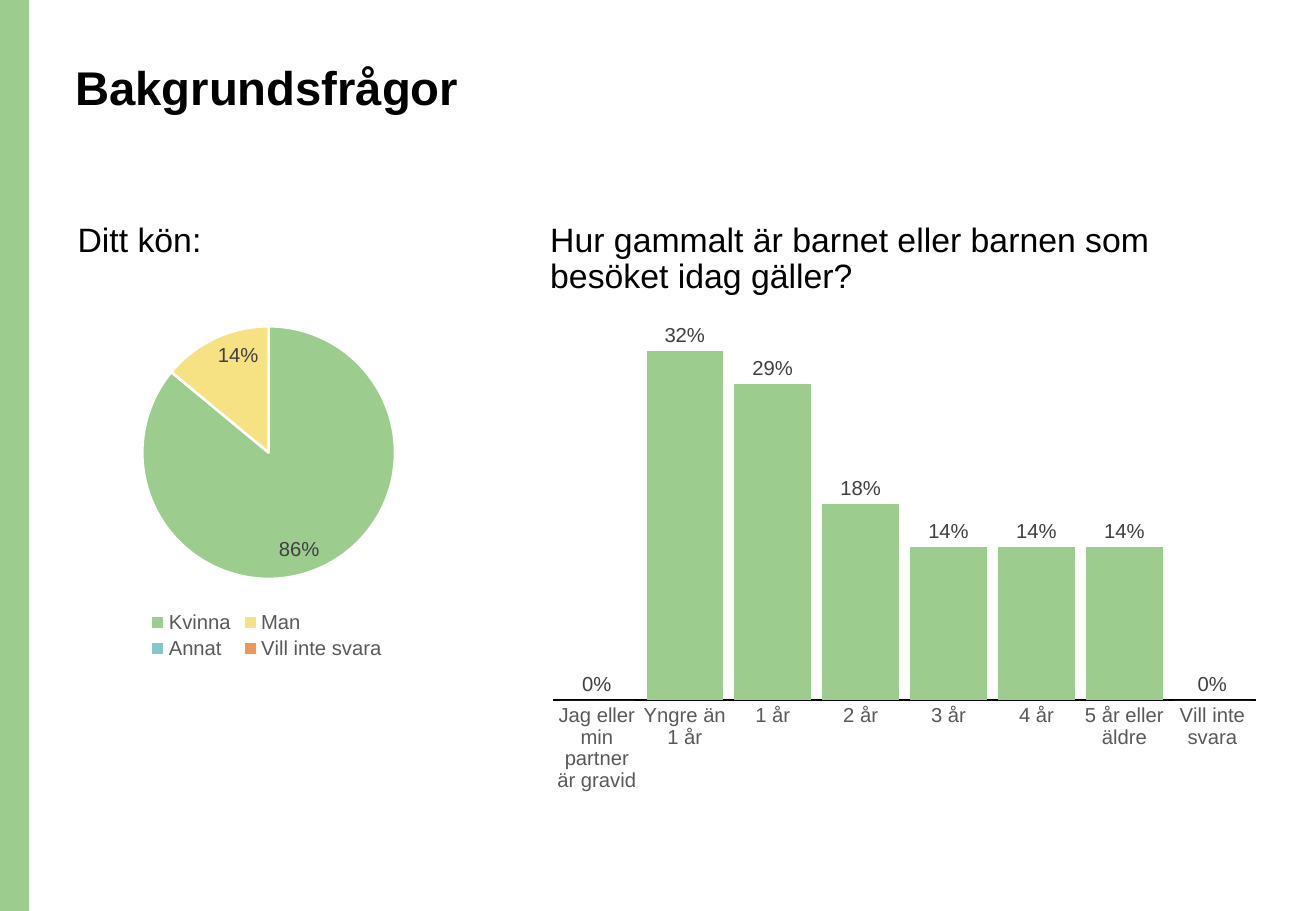
import pptx
import pptx.chart.data
import pptx.dml.color
import pptx.enum.chart
import pptx.enum.shapes
import pptx.enum.text
import pptx.oxml
import pptx.oxml.ns
import pptx.util
from pptx.util import Inches

COLOURS = {
    "text": "000000",
    "label": "404040",
    "muted": "595959",
    "white": "FFFFFF",
    "green": "9DCC8F",
    "yellow": "F6E183",
    "blue": "85C5CB",
    "orange": "F29559",
}
GENDERS = {"Kvinna": 0.86, "Man": 0.14, "Annat": 0, "Vill inte svara": 0}
CHILD_AGES = {
    "Jag eller min partner är gravid": 0,
    "Yngre än 1 år": 0.32,
    "1 år": 0.29,
    "2 år": 0.18,
    "3 år": 0.14,
    "4 år": 0.14,
    "5 år eller äldre": 0.14,
    "Vill inte svara": 0,
}


class SurveySlide:
    def __init__(self, presentation):
        self.slide = presentation.slides.add_slide(presentation.slide_layouts[5])

    def colour(self, name):
        return pptx.dml.color.RGBColor.from_string(COLOURS[name])

    def paint(self, fill, name):
        fill.solid()
        fill.fore_color.rgb = self.colour(name)

    def style_font(self, font, size, colour="text", bold=False):
        font.name = "Arial"
        font.size = pptx.util.Pt(size)
        font.bold = bold
        font.color.rgb = self.colour(colour)

    def set_text(self, shape, text, size, bold=False):
        frame = shape.text_frame
        frame.text = text
        frame.word_wrap = True
        frame.auto_size = pptx.enum.text.MSO_AUTO_SIZE.NONE
        frame.vertical_anchor = pptx.enum.text.MSO_ANCHOR.TOP
        paragraph = frame.paragraphs[0]
        paragraph.alignment = pptx.enum.text.PP_ALIGN.LEFT
        paragraph.line_spacing = 0.9
        self.style_font(paragraph.font, size, bold=bold)

    def add_band(self, left, top, width, height):
        band = self.slide.shapes.add_shape(
            pptx.enum.shapes.MSO_SHAPE.RECTANGLE,
            Inches(left), Inches(top), Inches(width), Inches(height))
        band.shadow.inherit = False
        self.paint(band.fill, "green")
        band.line.fill.background()

    def set_title(self, text, left, top, width, height):
        title = self.slide.shapes.title
        title.left, title.top = Inches(left), Inches(top)
        title.width, title.height = Inches(width), Inches(height)
        self.set_text(title, text, 28, bold=True)

    def add_question(self, text, left, top, width, height):
        box = self.slide.shapes.add_textbox(
            Inches(left), Inches(top), Inches(width), Inches(height))
        self.set_text(box, text, 20)

    def add_chart(self, kind, answers, box, plot_box, number_format, label_position):
        """Add a one-series chart; plot_box holds fractions of the chart's size."""
        data = pptx.chart.data.CategoryChartData()
        data.categories = list(answers)
        data.add_series("Series 1", list(answers.values()))
        chart = self.slide.shapes.add_chart(
            kind, *[Inches(length) for length in box], data).chart
        chart.has_title = False
        chart.has_legend = False
        self.style_font(chart.font, 10)
        self.place_plot(chart, plot_box)

        plot = chart.plots[0]
        plot.has_data_labels = True
        labels = plot.data_labels
        labels.show_value = True
        labels.show_percentage = False
        labels.number_format = number_format
        labels.number_format_is_linked = False
        labels.position = label_position
        self.style_font(labels.font, 12, "label")
        return chart

    def place_plot(self, chart, plot_box):
        plot_area = chart.element.chart.plotArea
        for layout in plot_area.findall(pptx.oxml.ns.qn("c:layout")):
            plot_area.remove(layout)
        sizes = "".join(
            f'<c:{tag} val="{value}"/>' for tag, value in zip("xywh", plot_box))
        plot_area.insert(0, pptx.oxml.parse_xml(
            f'<c:layout {pptx.oxml.ns.nsdecls("c")}><c:manualLayout>'
            '<c:layoutTarget val="inner"/><c:xMode val="edge"/><c:yMode val="edge"/>'
            f'{sizes}</c:manualLayout></c:layout>'))

    def add_pie(self, answers, box, plot_box, colours):
        chart = self.add_chart(
            pptx.enum.chart.XL_CHART_TYPE.PIE, answers, box, plot_box,
            '[<0.01]"";[>0.01]0%', pptx.enum.chart.XL_LABEL_POSITION.INSIDE_END)
        chart.plots[0].vary_by_categories = True
        for index, name in enumerate(colours):
            slice_format = chart.series[0].points[index].format
            self.paint(slice_format.fill, name)
            self.paint(slice_format.line.fill, "white")
            slice_format.line.width = pptx.util.Pt(1.5)
        chart.has_legend = True
        chart.legend.position = pptx.enum.chart.XL_LEGEND_POSITION.BOTTOM
        chart.legend.include_in_layout = False
        self.style_font(chart.legend.font, 12, "muted")

    def add_columns(self, answers, box, plot_box, maximum):
        chart = self.add_chart(
            pptx.enum.chart.XL_CHART_TYPE.COLUMN_CLUSTERED, answers, box, plot_box,
            "0%", pptx.enum.chart.XL_LABEL_POSITION.OUTSIDE_END)
        plot = chart.plots[0]
        plot.vary_by_categories = False
        plot.gap_width = 15
        plot.overlap = -27
        self.paint(plot.series[0].format.fill, "green")

        value_axis = chart.value_axis
        value_axis.minimum_scale = 0
        value_axis.maximum_scale = maximum
        value_axis.has_major_gridlines = False
        value_axis.visible = False

        category_axis = chart.category_axis
        category_axis.major_tick_mark = pptx.enum.chart.XL_TICK_MARK.NONE
        self.paint(category_axis.format.line.fill, "text")
        category_axis.format.line.width = pptx.util.Pt(0.75)
        self.style_font(category_axis.tick_labels.font, 12, "muted")


def main():
    presentation = pptx.Presentation()
    presentation.slide_width = Inches(10.83)
    presentation.slide_height = Inches(7.5)

    survey = SurveySlide(presentation)
    survey.add_band(0, 0, 0.24, 7.5)
    survey.set_title("Bakgrundsfrågor", 0.52, 0.48, 9.34, 1.02)
    survey.add_question("Ditt kön:", 0.54, 1.79, 3.6, 0.46)
    survey.add_question(
        "Hur gammalt är barnet eller barnen som besöket idag gäller?",
        4.43, 1.79, 6.03, 0.74)
    survey.add_pie(
        GENDERS, (0.53, 2.54, 3.33, 2.93), (0.19, 0.05, 0.63, 0.71),
        ("green", "yellow", "blue", "orange"))
    survey.add_columns(
        CHILD_AGES, (4.43, 2.54, 6.03, 4.03), (0.02, 0.02, 0.96, 0.78), 0.35)
    presentation.save("out.pptx")


if __name__ == "__main__":
    main()
